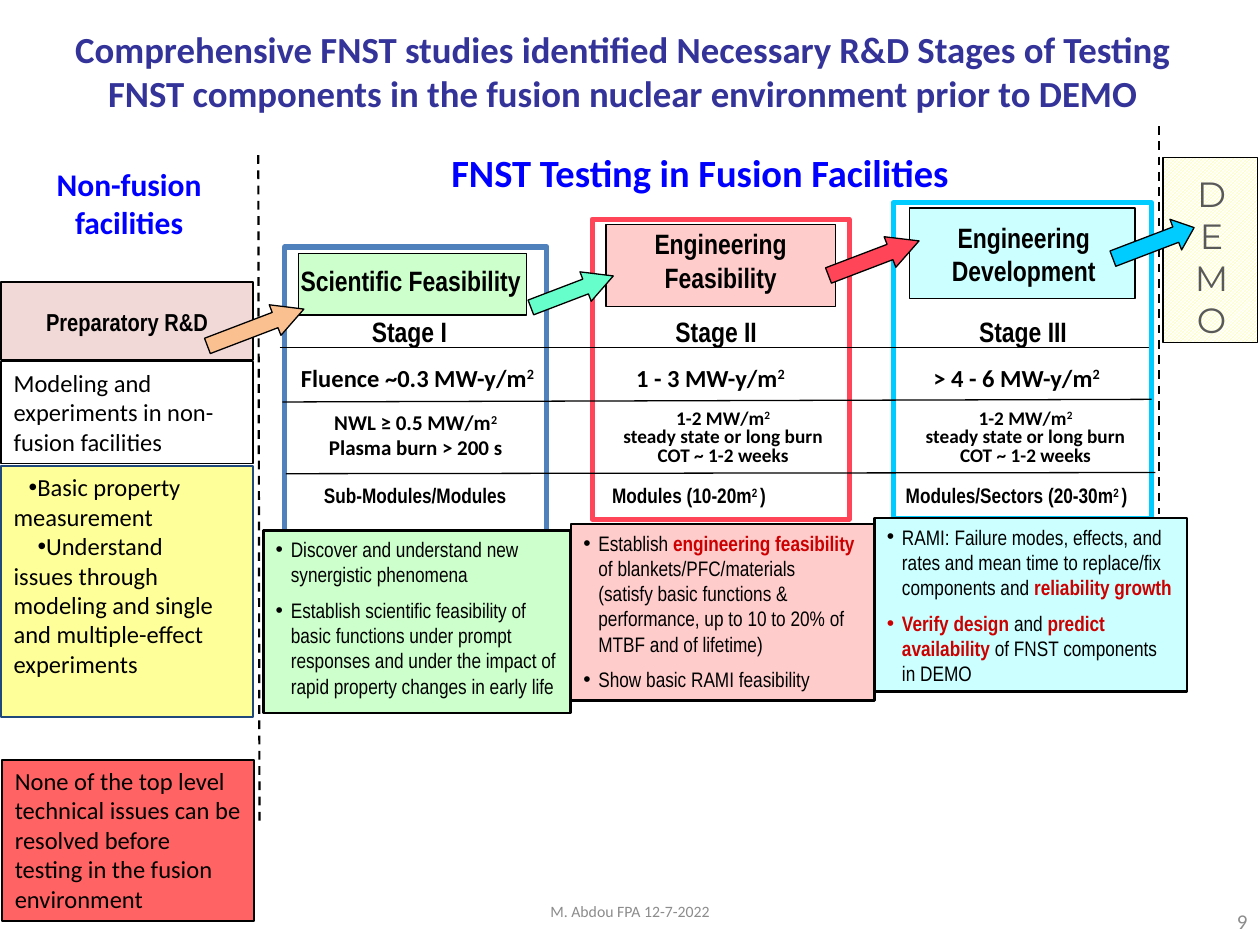
from lxml import etree
from pptx import Presentation
from pptx.dml.color import RGBColor
from pptx.enum.dml import MSO_LINE, MSO_PATTERN
from pptx.enum.shapes import MSO_CONNECTOR, MSO_SHAPE
from pptx.enum.text import MSO_ANCHOR, PP_ALIGN
from pptx.oxml.ns import qn
from pptx.util import Pt

LEFT, CENTER, RIGHT = PP_ALIGN.LEFT, PP_ALIGN.CENTER, PP_ALIGN.RIGHT
TOP, MIDDLE = MSO_ANCHOR.TOP, MSO_ANCHOR.MIDDLE
RECTANGLE, ARROW = MSO_SHAPE.RECTANGLE, MSO_SHAPE.RIGHT_ARROW
STRAIGHT, DASH = MSO_CONNECTOR.STRAIGHT, MSO_LINE.DASH
HATCH = MSO_PATTERN.DARK_UPWARD_DIAGONAL
BODY, NARROW, DISPLAY = "Calibri", "Arial Narrow", "Montserrat"
BLACK, BLUE, NAVY, RED, GRAY = "000000", "0000FF", "333399", "CC0000", "8C8C8C"
GREEN, PINK, CYAN, YELLOW = "CCFFCC", "FFCCCC", "CCFFFF", "FFFF99"
SUP, KEY = "superscript", "key phrase"
TILT = 339.1


def color(value):
    return RGBColor.from_string(value)


class SlideBuilder:
    """Holds the current slide and draws each kind of element, in points."""

    def __init__(self, page):
        self.page = page

    def box(self, place, fill=None, line=BLACK, width=0.75, alpha=None, kind=RECTANGLE):
        box = self.page.shapes.add_shape(kind, *map(Pt, place))
        box.shadow.inherit = False
        if fill:
            box.fill.solid()
            box.fill.fore_color.rgb = color(fill)
            if alpha:
                tone = box._element.spPr.find(qn("a:solidFill"))[0]
                etree.SubElement(tone, qn("a:alpha"), val=str(alpha * 1000))
        else:
            box.fill.background()
        box.line.color.rgb = color(line)
        box.line.width = Pt(width)
        return box

    def hatched(self, place, front, back):
        box = self.box(place)
        box.fill.patterned()
        box.fill.pattern = HATCH
        box.fill.fore_color.rgb = color(front)
        box.fill.back_color.rgb = color(back)

    def arrow(self, place, fill, head):
        arrow = self.box(place, fill, kind=ARROW)
        arrow.adjustments[0], arrow.adjustments[1] = 0.5, head
        arrow.rotation = TILT

    def line(self, start, end, width=0.75, dashed=False):
        line = self.page.shapes.add_connector(STRAIGHT, *map(Pt, start + end))
        line.line.color.rgb = color(BLACK)
        line.line.width = Pt(width)
        if dashed:
            line.line.dash_style = DASH
        etree.SubElement(line._element.spPr, qn("a:effectLst"))

    def text(self, place, paragraphs, size, **style):
        box = self.page.shapes.add_textbox(*map(Pt, place))
        self.put_text(box, paragraphs, size, **style)

    def put_text(self, box, paragraphs, size, font=BODY, tone=BLACK, bold=False,
                 align=LEFT, anchor=TOP, gap=0, spacing=None, indents=None):
        """Each paragraph is a list of (text, mark); indents adds bullets."""
        frame = box.text_frame
        frame.word_wrap = True
        frame.vertical_anchor = anchor
        for index, spans in enumerate(paragraphs):
            para = frame.paragraphs[0] if index == 0 else frame.add_paragraph()
            para.alignment = align
            if indents:
                margin, indent = indents[index]
                properties = para._p.get_or_add_pPr()
                properties.set("marL", str(Pt(margin)))
                properties.set("indent", str(Pt(indent)))
                etree.SubElement(properties, qn("a:buFont"), typeface="Arial")
                etree.SubElement(properties, qn("a:buChar"), char="•")
            if index and gap:
                para.space_before = Pt(gap)
            if spacing:
                para.line_spacing = spacing
            for words, mark in spans:
                for number, part in enumerate(words.split("\n")):
                    if number:
                        para.add_line_break()
                    if part:
                        span = para.add_run()
                        span.text = part
                        span.font.name, span.font.size = font, Pt(size)
                        span.font.bold = bold or mark == KEY
                        span.font.color.rgb = color(RED if mark == KEY else tone)
                        if mark == SUP:
                            span._r.get_or_add_rPr().set("baseline", "30000")


def plain(*texts):
    return [[(text, None)] for text in texts]


def main():
    deck = Presentation()
    deck.slide_width, deck.slide_height = Pt(720), Pt(540)
    slide = SlideBuilder(deck.slides.add_slide(deck.slide_layouts[6]))

    # Headings
    slide.text((29.5, 11.5, 653, 58.3), plain(
        "Comprehensive FNST studies identified Necessary R&D Stages of Testing "
        "FNST components in the fusion nuclear environment prior to DEMO"),
        21, tone=NAVY, bold=True, align=CENTER)
    for place, heading, size in [
        ((7.9, 90.7, 131.8, 51), "Non-fusion facilities", 18),
        ((139, 81.4, 522, 33.8), "FNST Testing in Fusion Facilities", 22),
    ]:
        slide.text(place, plain(heading), size, tone=BLUE, bold=True, align=CENTER)

    # Non-fusion column
    preparatory = slide.box((0.7, 161.3, 144, 44.6), "E6B9B8", width=1, alpha=54)
    slide.put_text(preparatory, plain("Preparatory R&D"), 14, font=NARROW, bold=True,
                   align=CENTER, anchor=MIDDLE)
    modeling = slide.box((0.7, 206.6, 144, 58.3), width=1)
    slide.put_text(modeling, plain("Modeling and experiments in non-fusion facilities"), 14)
    tasks = slide.box((0.7, 266.4, 144, 143.3), YELLOW, "1F497D", 1.25)
    slide.put_text(tasks, plain(
        "Basic property measurement",
        "Understand\nissues through modeling and single and multiple-effect experiments"),
        14, indents=[(0, 8.64), (0, 13.68)])
    warning = slide.box((1.4, 434.2, 144, 92.2), "FF0000", width=1.25, alpha=61)
    slide.put_text(warning, plain("None of the top level technical issues can be resolved "
                                  "before testing in the fusion environment"), 14)

    # Dashed dividers and DEMO
    slide.line((147.6, 88.6), (148.3, 470.9), 1.25, dashed=True)
    slide.line((662.4, 72), (662.4, 293.8), 1.25, dashed=True)
    slide.hatched((664.6, 90, 54, 105.8), "FFFF66", "FFFFFF")
    slide.text((672.5, 95, 39.6, 104.4), plain("D E M O"), 20, font=DISPLAY,
               tone="595959", align=CENTER)

    # Stage frames, name plates and stage numbers
    for frame, edge, fill, plate, plate_fill, name_place, name, number_place, number in [
        ((510.5, 115.9, 147.6, 180.7), "00CCFF", "FFFFFF",
         (519.8, 118.8, 128.9, 51.8), CYAN,
         (511.2, 122.4, 147.6, 65.5), "Engineering Development",
         (544.3, 176.4, 80.6, 26.6), "Stage III"),
        ((338.4, 125.3, 146.9, 171.4), "FF4557", "FFFFFF",
         (346.3, 128.2, 131, 46.8), PINK,
         (342.7, 126, 138.2, 46.1), "Engineering\nFeasibility",
         (375.8, 176.4, 67, 26.6), "Stage II"),
        ((162.7, 141.1, 149.8, 164.9), "4F81BD", None,
         (170.6, 144.7, 130.3, 35.3), GREEN,
         (162.7, 146.9, 144, 26.6), "Scientific Feasibility",
         (201.6, 176.4, 64.8, 26.6), "Stage I"),
    ]:
        slide.box(frame, fill, edge, 3)
        slide.box(plate, plate_fill)
        for place, label in [(name_place, name), (number_place, number)]:
            slide.text(place, plain(*label.split("\n")), 16, font=NARROW, bold=True,
                       align=CENTER)

    # Arrows from stage to stage
    for place, fill, head in [
        ((116.6, 177.8, 59, 18.7), "FAC090", 0.94),
        ((301.7, 157.7, 50.4, 18), "66FFCC", 0.94),
        ((471.6, 138.2, 55.4, 18.7), "FF4557", 0.95),
        ((634.3, 129.6, 49.7, 18.7), "00CCFF", 0.6),
    ]:
        slide.arrow(place, fill, head)

    # Row rules
    for left, start, end in [(159.8, 198.7, 198.7), (161.3, 229.7, 228.2),
                             (163.4, 270.7, 270)]:
        slide.line((left, start), (left + 496.8, end))

    # Fluence row
    for left, width, value in [(164.9, 162, "Fluence ~0.3 MW-y/m"),
                               (356.4, 112.3, "1 - 3 MW-y/m"),
                               (526.3, 119.5, "> 4 - 6 MW-y/m")]:
        slide.text((left, 203.8, width, 24.5), [[(value, None), ("2", SUP)]], 14, bold=True)

    # Wall load row
    slide.text((165.6, 230.4, 144, 36),
               [[("NWL ≥ 0.5 MW/m", None), ("2", SUP), ("\nPlasma burn > 200 s", None)]],
               12, bold=True, align=CENTER)
    for left in (339.8, 512.6):
        slide.text((left, 231.1, 146.9, 39.6),
                   [[("1-2 MW/m", None), ("2", SUP)],
                    *plain("steady state or long burn", "COT ~ 1-2 weeks")],
                   11, bold=True, align=CENTER, spacing=0.8)

    # Test article row
    for left, width, spans, align in [
        (172.8, 128.9, [("Sub-Modules/Modules", None)], CENTER),
        (342.7, 138.2, [("Modules (10-20m", None), ("2 ", SUP), (")", None)], LEFT),
        (510.5, 144, [("Modules/Sectors (20-30m", None), ("2 ", SUP), (")", None)], LEFT),
    ]:
        slide.text((left, 272.2, width, 21.6), [spans], 12, font=NARROW, bold=True,
                   align=align)

    # Goals of each stage
    for place, fill, goals in [
        ((326.2, 299.5, 173.5, 100.8), PINK, [
            [("Establish ", None), ("engineering feasibility", KEY),
             ("\nof blankets/PFC/materials\n(satisfy basic functions & performance, "
              "up to 10 to 20% of MTBF and of lifetime)", None)],
            [("Show basic RAMI feasibility", None)]]),
        ((499.7, 295.9, 178.6, 99.4), CYAN, [
            [("RAMI: Failure modes, effects, and rates and mean time to replace/fix "
              "components and ", None), ("reliability growth", KEY)],
            [("Verify design ", KEY), ("and ", None), ("predict availability ", KEY),
             ("of FNST components in DEMO", None)]]),
        ((150.5, 303.1, 175.7, 104.4), GREEN, plain(
            "Discover and understand new synergistic phenomena",
            "Establish scientific feasibility of basic functions under prompt responses "
            "and under the impact of rapid property changes in early life")),
    ]:
        box = slide.box(place, fill, width=1.5)
        slide.put_text(box, goals, 12, font=NARROW, gap=6, indents=[(8.64, -8.64)] * 2)

    # Footer
    slide.text((230.4, 511.9, 259.2, 28.8), plain("M. Abdou FPA 12-7-2022"), 9,
               tone=GRAY, align=CENTER)
    slide.text((552.2, 511.9, 167.8, 28.8), plain("9"), 12, tone=GRAY, align=RIGHT,
               anchor=MIDDLE)

    deck.save("out.pptx")


if __name__ == "__main__":
    main()
